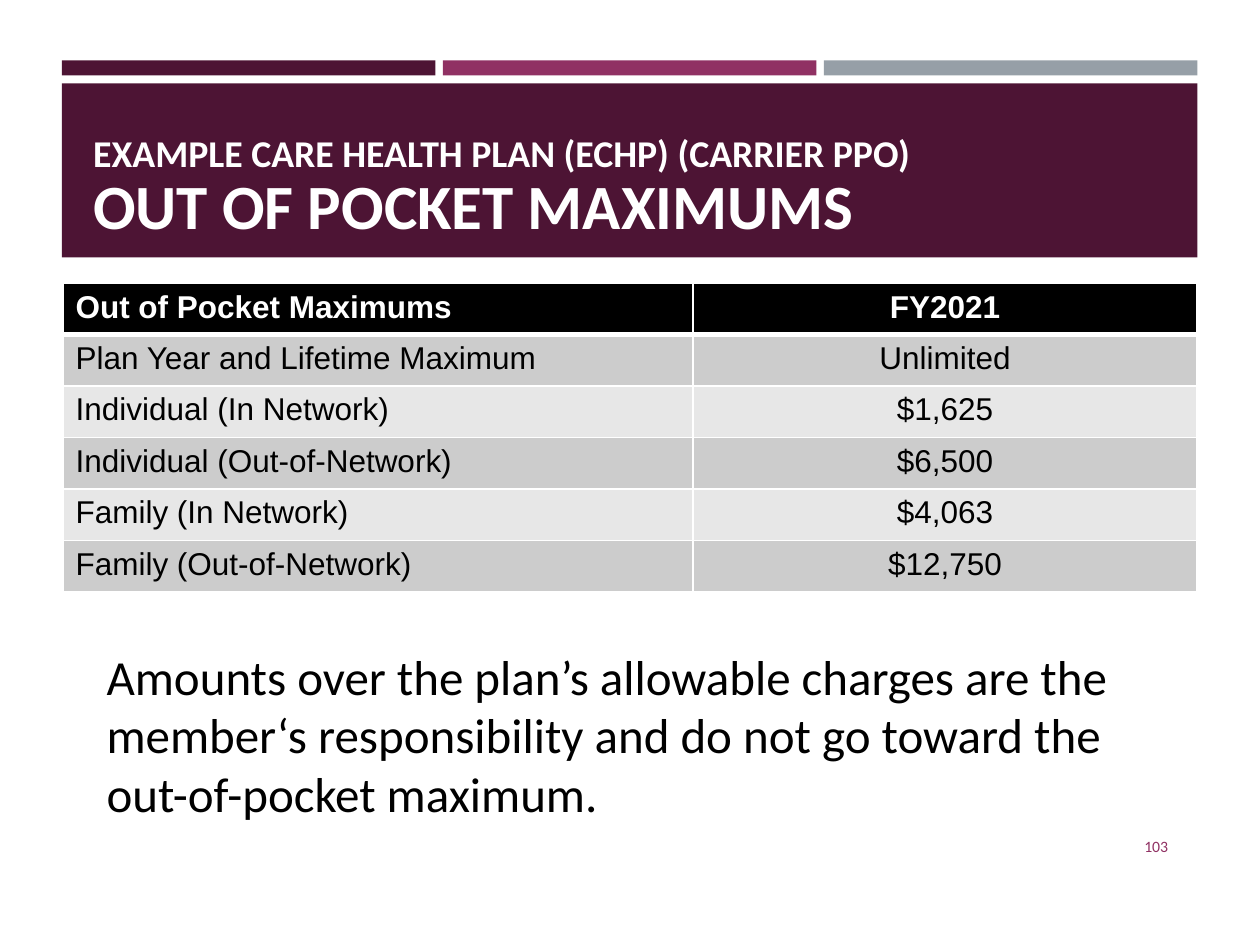
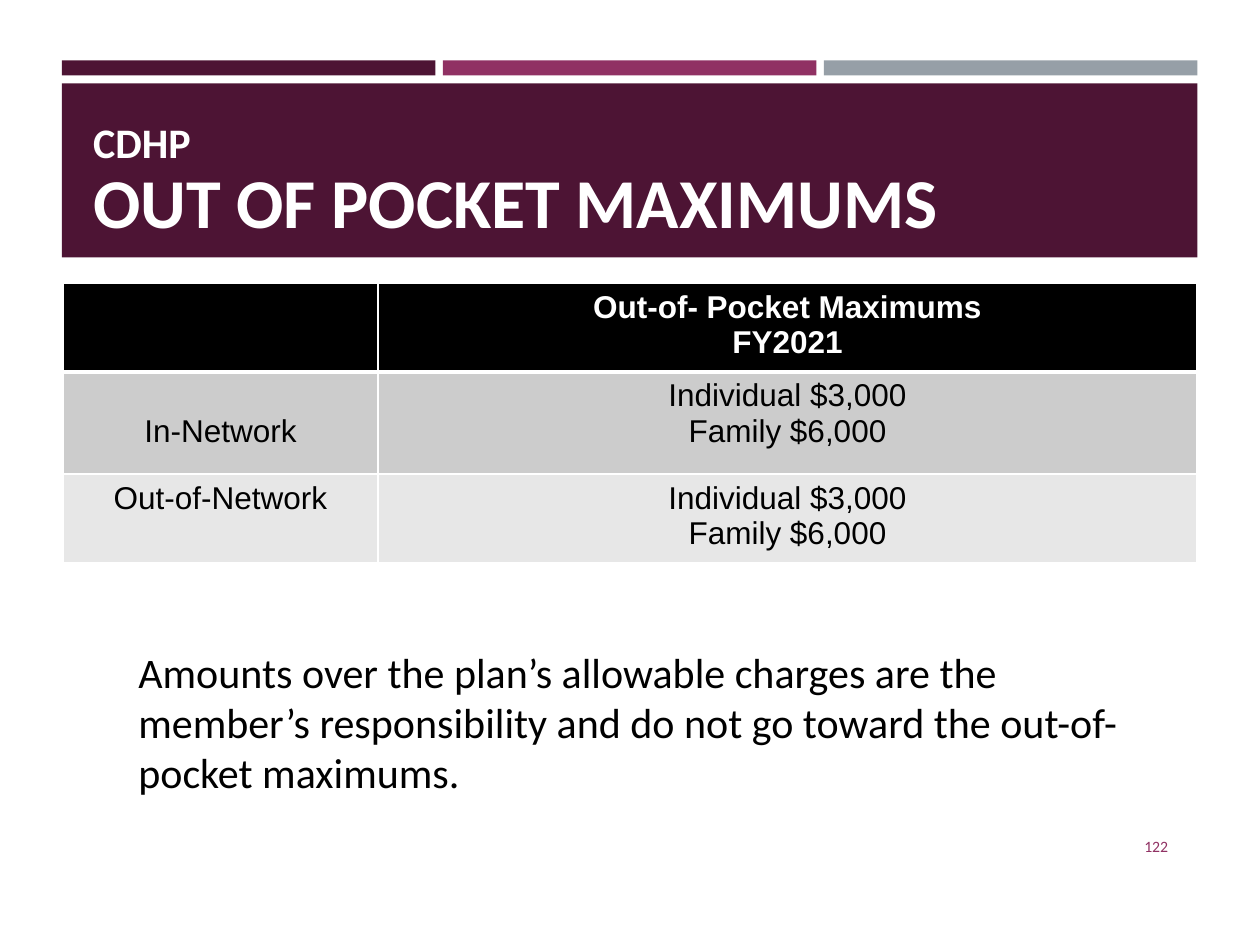
"""Build two slides on out-of-pocket maximums of health plans."""
import pptx
import pptx.dml.color
import pptx.enum.shapes
import pptx.enum.text
import pptx.oxml
import pptx.oxml.ns
import pptx.util

Cm = pptx.util.Cm
Align = pptx.enum.text.PP_ALIGN
Anchor = pptx.enum.text.MSO_ANCHOR

COLORS = {"plum": "4D1434", "berry": "903163", "slate": "969FA7", "white": "FFFFFF",
          "black": "000000", "dark row": "CCCCCC", "light row": "E7E7E7"}

BAND_LEFT, BAND_WIDTH, BAR_GAP = 1.25, 22.89, 0.15
BAR_WIDTH = (BAND_WIDTH - 2 * BAR_GAP) / 3
bands = [(BAND_LEFT + index * (BAR_WIDTH + BAR_GAP), 1.22, BAR_WIDTH, 0.3, color)
         for index, color in enumerate(("plum", "berry", "slate"))]
bands.append((BAND_LEFT, 1.68, BAND_WIDTH, 3.51, "plum"))

pages = [
    {"plan": "EXAMPLE CARE HEALTH PLAN (ECHP) (CARRIER PPO)", "title sizes": (21.6, 36),
     "columns": (12.7, 10.16), "heights": (0.98, 1.04, 1.04, 1.04, 1.04, 1.04),
     "first column": Align.LEFT, "label spacing": {},
     "rows": [("Out of Pocket Maximums", "FY2021"),
              ("Plan Year and Lifetime Maximum", "Unlimited"),
              ("Individual (In Network)", "$1,625"),
              ("Individual (Out-of-Network)", "$6,500"),
              ("Family (In Network)", "$4,063"),
              ("Family (Out-of-Network)", "$12,750")],
     "note": "Amounts over the plan’s allowable charges are the member‘s responsibility "
             "and do not go toward the out-of-pocket maximum.",
     "note place": (1.9, 12.9, 22.23, 3.84), "note size": 28, "number": "103"},
    {"plan": "CDHP", "title sizes": (24, 40),
     "columns": (6.35, 16.51), "heights": (1.68, 2.06, 1.68),
     "first column": Align.CENTER, "label spacing": {"In-Network": 2.0},
     "rows": [("", "Out-of- Pocket Maximums\nFY2021"),
              ("In-Network", "Individual $3,000\nFamily $6,000"),
              ("Out-of-Network", "Individual $3,000\nFamily $6,000")],
     "note": "Amounts over the plan’s allowable charges are the member’s responsibility "
             "and do not go toward the out-of-pocket maximums.",
     "note place": (2.54, 12.9, 20.96, 3.33), "note size": 24, "number": "122"},
]


def write(para, text, size, color="black", font="Calibri", bold=False,
          align=Align.LEFT, spacing=None):
    """Add a formatted run to a paragraph."""
    para.alignment = align
    if spacing:
        para.line_spacing = spacing
    span = para.add_run()
    span.text = text
    span.font.size = pptx.util.Pt(size)
    span.font.name = font
    span.font.bold = bold
    span.font.color.rgb = pptx.dml.color.RGBColor.from_string(COLORS[color])


def add_frame(page, place, anchor=Anchor.TOP):
    """Add a wrapping text box and return its text frame."""
    frame = page.shapes.add_textbox(*map(Cm, place)).text_frame
    frame.word_wrap = True
    frame.vertical_anchor = anchor
    return frame


deck = pptx.Presentation()
deck.slide_width, deck.slide_height = Cm(25.4), Cm(19.05)

for content in pages:
    page = deck.slides.add_slide(deck.slide_layouts[6])

    for *place, color in bands:
        band = page.shapes.add_shape(pptx.enum.shapes.MSO_SHAPE.RECTANGLE, *map(Cm, place))
        band.shadow.inherit = False
        band.fill.solid()
        band.fill.fore_color.rgb = pptx.dml.color.RGBColor.from_string(COLORS[color])
        band.line.fill.background()

    title = add_frame(page, (1.63, 1.91, 22.2, 3), Anchor.BOTTOM)
    title.margin_bottom = 0
    heading = title.paragraphs[0]
    plan_size, topic_size = content["title sizes"]
    write(heading, content["plan"], plan_size, "white", bold=True, spacing=0.9)
    heading.add_line_break()
    write(heading, "OUT OF POCKET MAXIMUMS", topic_size, "white", bold=True, spacing=0.9)

    rows, widths, heights = content["rows"], content["columns"], content["heights"]
    table = page.shapes.add_table(len(rows), len(widths), Cm(1.27), Cm(5.72),
                                  Cm(sum(widths)), Cm(sum(heights))).table
    for column, width in zip(table.columns, widths):
        column.width = Cm(width)
    for row_index, texts in enumerate(rows):
        table.rows[row_index].height = Cm(heights[row_index])
        header = row_index == 0
        fill = "black" if header else ("light row", "dark row")[row_index % 2]
        for column_index, text in enumerate(texts):
            cell = table.cell(row_index, column_index)
            cell.fill.solid()
            cell.fill.fore_color.rgb = pptx.dml.color.RGBColor.from_string(COLORS[fill])
            thick_side = {0: "B", 1: "T"}.get(row_index)
            for position, side in enumerate("LRTB"):
                points = 3 if side == thick_side else 1
                border = pptx.oxml.parse_xml(
                    f'<a:ln{side} {pptx.oxml.ns.nsdecls("a")} w="{pptx.util.Pt(points)}">'
                    f'<a:solidFill><a:srgbClr val="{COLORS["white"]}"/></a:solidFill></a:ln{side}>')
                cell._tc.get_or_add_tcPr().insert(position, border)
            if not text:
                continue
            for line_index, line in enumerate(text.split("\n")):
                frame = cell.text_frame
                para = frame.add_paragraph() if line_index else frame.paragraphs[0]
                write(para, line, 18, "white" if header else "black", "Arial", header,
                      Align.CENTER if column_index else content["first column"],
                      content["label spacing"].get(text))

    number = add_frame(page, (21.67, 16.54, 2.13, 1.02), Anchor.MIDDLE)
    write(number.paragraphs[0], content["number"], 9, "berry", align=Align.RIGHT)
    note = add_frame(page, content["note place"])
    write(note.paragraphs[0], content["note"], content["note size"])

deck.save("out.pptx")
